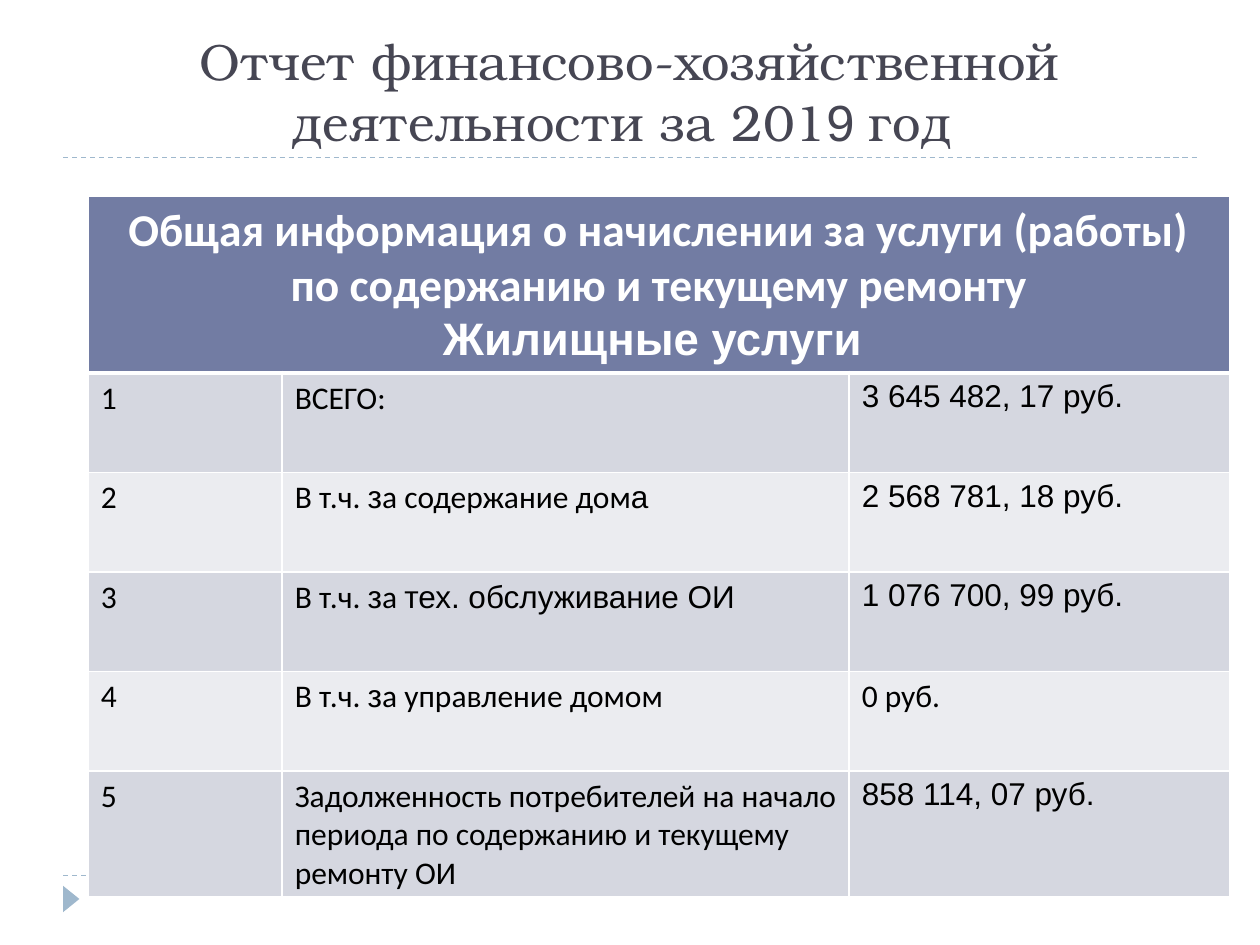
from pptx import Presentation
from pptx.dml.color import RGBColor
from pptx.enum.dml import MSO_LINE as Dash
from pptx.enum.shapes import MSO_CONNECTOR as Conn, MSO_SHAPE as Shape
from pptx.enum.text import MSO_ANCHOR as Anchor, PP_ALIGN as Align
from pptx.oxml import parse_xml
from pptx.oxml.ns import nsdecls
from pptx.util import Inches, Pt

BLACK = RGBColor(0x00, 0x00, 0x00)
WHITE = RGBColor(0xFF, 0xFF, 0xFF)
INK = RGBColor(0x46, 0x46, 0x53)
SKY = RGBColor(0x9F, 0xB8, 0xCD)
HEAD = RGBColor(0x72, 0x7C, 0xA3)
BANDS = (RGBColor(0xD5, 0xD7, 0xE0), RGBColor(0xEB, 0xEC, 0xF0))

SERIF, SANS, BODY = "TeX Gyre Bonum", "Arial", "Calibri"

# Each text is a list of (words, font) runs
TITLE = [("Отчет финансово-хозяйственной деятельности за 201", SERIF),
         ("9 ", SANS), ("год ", SERIF)]
HEADER = [
    [("Общая информация о начислении за услуги (работы) "
      "по содержанию и текущему ремонту", BODY)],
    [("Жилищные услуги ", SANS)],
]
PART = [("В т.ч. ", BODY), ("з", SANS)]
ROWS = [
    ([("ВСЕГО:", BODY)], ("3 645 482, 17 руб.", SANS)),
    (PART + [("а содержание дом", BODY), ("а", SANS)],
     ("2 568 781, 18 руб.", SANS)),
    (PART + [("а ", BODY), ("тех. обслуживание ОИ", SANS)],
     ("1 076 700, 99 руб.", SANS)),
    (PART + [("а управление домом", BODY)], ("0 руб.", BODY)),
    ([("Задолженность потребителей на начало периода по содержанию "
       "и текущему ремонту ОИ", BODY)], ("858 114, 07 руб.", SANS)),
]
COLS = (1.54, 4.5, 3.02)
HIGHS = (1.16, 0.79, 0.79, 0.79, 0.79, 0.8)


def write(para, runs, size, color, bold=False, align=Align.LEFT):
    para.alignment = align
    for words, face in runs:
        run = para.add_run()
        run.text = words
        font = run.font
        font.name, font.size, font.bold = face, Pt(size), bold
        font.color.rgb = color


def add_rule(slide, y):
    rule = slide.shapes.add_connector(
        Conn.STRAIGHT, Inches(0.5), Inches(y), Inches(9.5), Inches(y))
    rule.line.color.rgb = SKY
    rule.line.width = Pt(0.75)
    rule.line.dash_style = Dash.DASH
    rule._element.spPr.append(parse_xml(f"<a:effectLst {nsdecls('a')}/>"))


def add_mark(slide):
    mark = slide.shapes.add_shape(
        Shape.ISOSCELES_TRIANGLE,
        Inches(0.46), Inches(7.07), Inches(0.21), Inches(0.13))
    mark.rotation = 90
    mark.shadow.inherit = False
    mark.fill.solid()
    mark.fill.fore_color.rgb = SKY
    mark.line.fill.background()


def add_title(slide):
    box = slide.shapes.add_textbox(
        Inches(0.5), Inches(0.25), Inches(9), Inches(1))
    frame = box.text_frame
    frame.word_wrap = True
    frame.vertical_anchor = Anchor.BOTTOM
    write(frame.paragraphs[0], TITLE, 29, INK, align=Align.CENTER)


def paint(cell, color, top=1, base=1):
    cell.fill.solid()
    cell.fill.fore_color.rgb = color
    props = cell._tc.get_or_add_tcPr()
    # Borders come before the fill
    sides = (("L", 1), ("R", 1), ("T", top), ("B", base))
    for spot, (side, width) in enumerate(sides):
        props.insert(spot, parse_xml(
            f'<a:ln{side} {nsdecls("a")} w="{Pt(width)}"><a:solidFill>'
            f'<a:srgbClr val="{WHITE}"/></a:solidFill></a:ln{side}>'))


def add_grid(slide):
    grid = slide.shapes.add_table(
        len(HIGHS), len(COLS), Inches(0.7), Inches(1.56),
        Inches(sum(COLS)), Inches(sum(HIGHS))).table
    for col, width in zip(grid.columns, COLS):
        col.width = Inches(width)
    for row, high in zip(grid.rows, HIGHS):
        row.height = Inches(high)

    # Header across all columns
    for cell in grid.rows[0].cells:
        paint(cell, HEAD, base=3)
    top = grid.cell(0, 0)
    top.merge(grid.cell(0, len(COLS) - 1))
    frame = top.text_frame
    write(frame.paragraphs[0], HEADER[0], 26, WHITE, True, Align.CENTER)
    write(frame.add_paragraph(), HEADER[1], 26, WHITE, True, Align.CENTER)

    # Numbered rows in two alternating shades
    for num, (label, total) in enumerate(ROWS, 1):
        texts = ([(str(num), BODY)], label, [total])
        for cell, runs in zip(grid.rows[num].cells, texts):
            paint(cell, BANDS[(num - 1) % 2], top=3 if num == 1 else 1)
            write(cell.text_frame.paragraphs[0], runs, 18, BLACK)


def main():
    deck = Presentation()
    deck.slide_width, deck.slide_height = Inches(10), Inches(7.5)
    slide = deck.slides.add_slide(deck.slide_layouts[6])
    for y in (6.95, 1.25):
        add_rule(slide, y)
    add_mark(slide)
    add_title(slide)
    add_grid(slide)
    deck.save("out.pptx")


if __name__ == "__main__":
    main()
